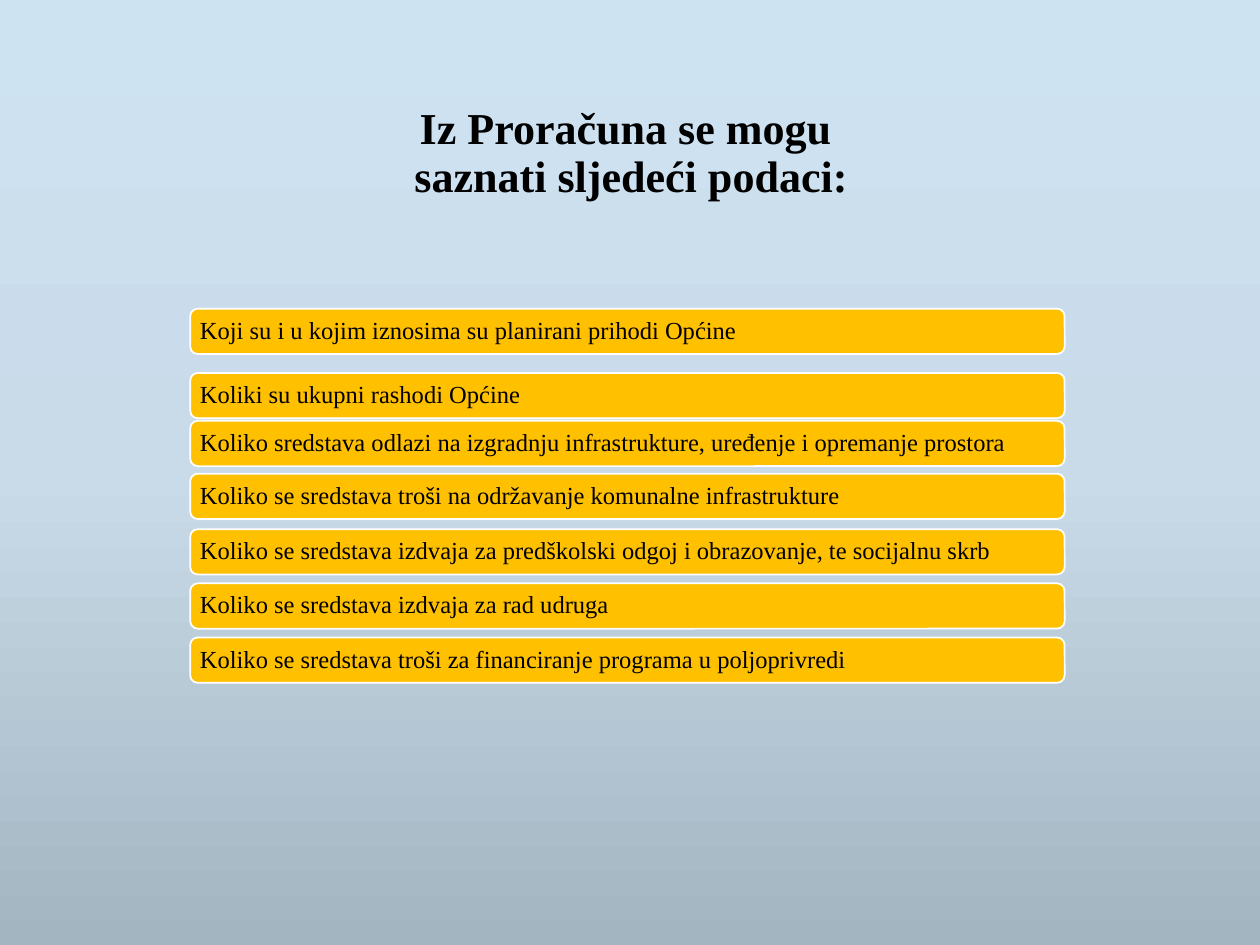
from copy import deepcopy

from pptx import Presentation
from pptx.dml.color import RGBColor
from pptx.enum import shapes, text
from pptx.oxml.ns import qn
from pptx.util import Inches, Pt

HUES = {"sky": "CEE3F2", "mist": "C9DAE8", "slate": "A4B5C2",
        "gold": "FFC000", "white": "FFFFFF", "black": "000000"}


def hue(name):
    return RGBColor.from_string(HUES[name])


def write(shape, words, size, bold=False, align=text.PP_ALIGN.LEFT, inset=(0.1, 0.05)):
    frame = shape.text_frame
    frame.text = words
    frame.word_wrap = True
    frame.auto_size = text.MSO_AUTO_SIZE.NONE
    frame.vertical_anchor = text.MSO_ANCHOR.MIDDLE
    frame.margin_left = frame.margin_right = Inches(inset[0])
    frame.margin_top = frame.margin_bottom = Inches(inset[1])
    para = frame.paragraphs[0]
    para.alignment = align
    para.line_spacing = 0.9
    for run in para.runs:
        run.font.name = "Times New Roman"
        run.font.size = Pt(size)
        run.font.bold = bold
        run.font.color.rgb = hue("black")


deck = Presentation()
deck.slide_width, deck.slide_height = Inches(10), Inches(7.5)
slide = deck.slides.add_slide(deck.slide_layouts[5])

# Background: three colours from top to bottom
fill = slide.background.fill
fill.gradient()
fill.gradient_angle = 270
stops = slide.element.find(".//" + qn("a:gsLst"))
stops.insert(1, deepcopy(stops[0]))
for stop, name, place in zip(fill.gradient_stops, ("sky", "mist", "slate"), (0, 0.5, 1)):
    stop.color.rgb = hue(name)
    stop.position = place

title = slide.shapes.title
title.left, title.top = Inches(0.51), Inches(0.76)
title.width, title.height = Inches(9), Inches(0.93)
write(title, "Iz Proračuna se mogu \vsaznati sljedeći podaci:", 25.2,
      bold=True, align=text.PP_ALIGN.CENTER)

bars = [
    (2.45, "Koji su i u kojim iznosima su planirani prihodi Općine"),
    (2.96, "Koliki su ukupni rashodi Općine"),
    (3.34, "Koliko sredstava odlazi na izgradnju infrastrukture, uređenje i opremanje prostora"),
    (3.76, "Koliko se sredstava troši na održavanje komunalne infrastrukture"),
    (4.2, "Koliko se sredstava izdvaja za predškolski odgoj i obrazovanje, te socijalnu skrb"),
    (4.63, "Koliko se sredstava izdvaja za rad udruga"),
    (5.06, "Koliko se sredstava troši za financiranje programa u poljoprivredi"),
]
for top, words in bars:
    bar = slide.shapes.add_shape(shapes.MSO_SHAPE.ROUNDED_RECTANGLE,
                                 Inches(1.51), Inches(top), Inches(6.94), Inches(0.36))
    bar.shadow.inherit = False
    bar.fill.solid()
    bar.fill.fore_color.rgb = hue("gold")
    bar.line.color.rgb = hue("white")
    bar.line.width = Pt(1)
    write(bar, words, 14, inset=(0.06, 0.06))

deck.save("out.pptx")
